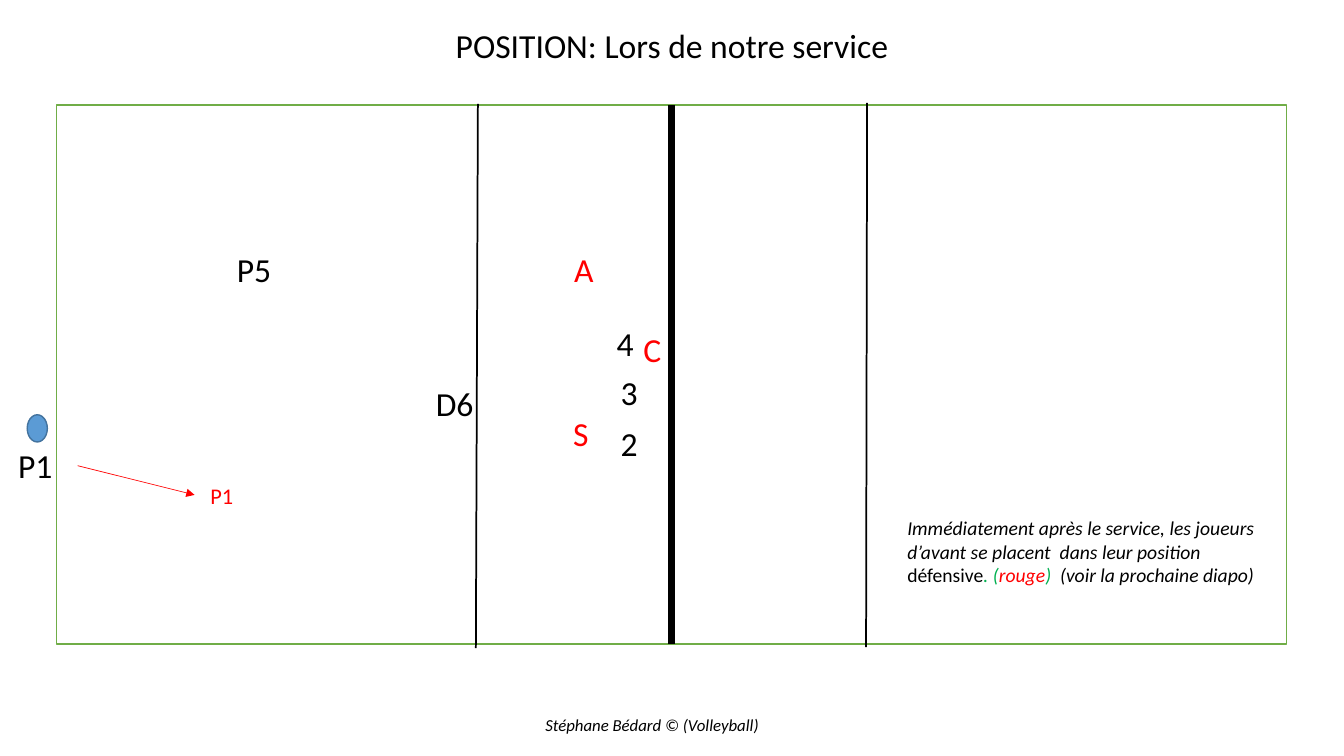
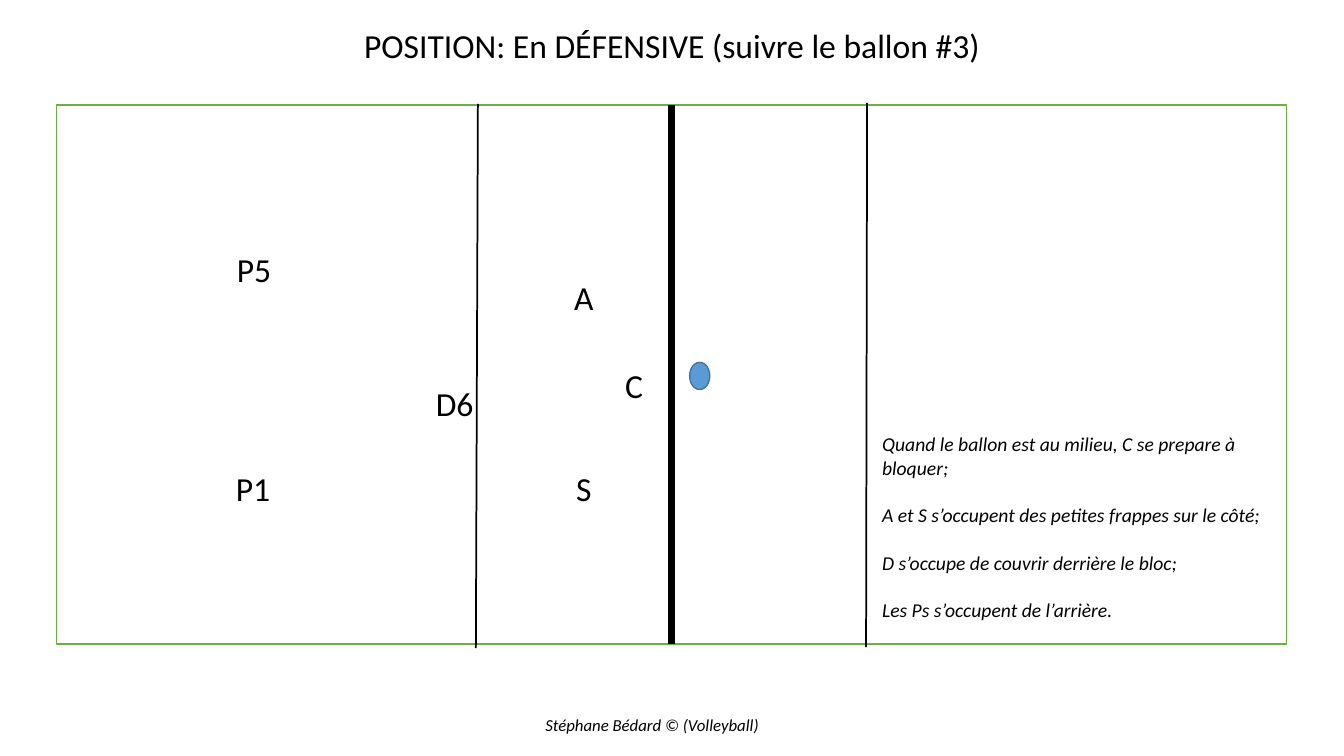
from pptx import Presentation
from pptx.dml.color import RGBColor
from pptx.enum.shapes import MSO_CONNECTOR, MSO_SHAPE
from pptx.enum.text import MSO_ANCHOR, PP_ALIGN
from pptx.oxml.ns import qn
from pptx.util import Inches, Pt
from lxml.etree import SubElement

INK = {
    "black": "000000", "red": "FF0000", "green": "00B050", "white": "FFFFFF",
    "court": "70AD47", "ball": "5B9BD5", "rim": "43739E",
}
FONT = "Calibri"
WIDE, HIGH = 13.33, 7.5
LEFT, TOP, LONG, DEEP = 0.56, 1.04, 12.2, 5.35
MID = LEFT + LONG / 2
LINES = [
    ((MID, TOP), (MID, TOP + DEEP), 4.5),
    ((4.74, 1.03), (4.72, 6.43), 1.25),
    ((8.6, 1.02), (8.59, 6.42), 1.25),
]
FOOT = "Stéphane Bédard © (Volleyball)"
BACK = [("D6", 4.51, 4.0, "black", 24), ("P5", 2.52, 2.67, "black", 24)]

SLIDES = [
    {
        "title": "POSITION: Lors de notre service",
        "ball": (0.37, 4.25),
        "team": [
            ("4", 6.2, 3.4, "black", 24),
            ("3", 6.24, 3.89, "black", 24),
            ("2", 6.24, 4.4, "black", 24),
            ("P1", 0.35, 4.61, "black", 24),
            ("P1", 2.2, 4.92, "red", 16),
            ("C", 6.47, 3.46, "red", 24),
            ("S", 5.76, 4.3, "red", 24),
            ("A", 5.79, 2.67, "red", 24),
        ],
        "moves": [((0.77, 4.62), (1.93, 4.91))],
        "box": (8.9, 5.07, 3.92, 1.04),
        "note": [[
            ("Immédiatement après le service, les joueurs d’avant se placent  dans leur position ", "black", True),
            ("défensive", "black", False),
            (". (", "green", True),
            ("rouge", "red", True),
            (")  ", "green", True),
            ("(voir la prochaine diapo)", "black", True),
        ]],
    },
    {
        "title": "POSITION: En DÉFENSIVE (suivre le ballon #3)",
        "ball": (6.94, 3.73),
        "team": [
            ("C", 6.29, 3.82, "black", 24),
            ("A", 5.79, 2.95, "black", 24),
            ("S", 5.79, 4.84, "black", 24),
            ("P1", 2.51, 4.84, "black", 24),
        ],
        "moves": [],
        "box": (8.65, 4.24, 4.11, 2.22),
        "note": [[(line, "black", True)] for line in (
            "Quand le ballon est au milieu, C se prepare à bloquer;",
            "A et S s’occupent des petites frappes sur le côté;",
            "D s’occupe de couvrir derrière le bloc;",
            "Les Ps s’occupent de l’arrière.",
        )],
    },
]


def tint(name):
    return RGBColor.from_string(INK[name])


def put(item, **form):
    for key, value in form.items():
        setattr(item, key, value)


def place(*box):
    return [Inches(n) for n in box]


def write(para, text, color="black", size=24, slant=False):
    run = para.add_run()
    run.text = text
    put(run.font, name=FONT, size=Pt(size), italic=slant)
    run.font.color.rgb = tint(color)


def shape(slide, kind, box, fill, edge):
    item = slide.shapes.add_shape(kind, *place(*box))
    item.shadow.inherit = False
    item.fill.solid()
    item.fill.fore_color.rgb = tint(fill)
    item.line.color.rgb = tint(edge)
    item.line.width = Pt(1)


def line(slide, start, end, width, color="black", head=False):
    item = slide.shapes.add_connector(MSO_CONNECTOR.STRAIGHT, *place(*start, *end))
    item.line.color.rgb = tint(color)
    item.line.width = Pt(width)
    if head:
        SubElement(item.line._get_or_add_ln(), qn("a:tailEnd"), type="triangle")
    SubElement(item._element.spPr, qn("a:effectLst"))


def frame(slide, box):
    text = slide.shapes.add_textbox(*place(*box)).text_frame
    text.word_wrap = True
    return text


def label(slide, text, x, y, color, size):
    wide, high = 0.6, 0.5
    body = frame(slide, (x - wide / 2, y - high / 2, wide, high))
    put(body, margin_left=0, margin_right=0, margin_top=0, margin_bottom=0,
        vertical_anchor=MSO_ANCHOR.MIDDLE)
    para = body.paragraphs[0]
    para.alignment = PP_ALIGN.CENTER
    write(para, text, color, size)


def head(slide, text):
    left, top, width, height = place(WIDE / 8, 0.24, WIDE * 3 / 4, 0.47)
    title = slide.shapes.title
    put(title, left=left, top=top, width=width, height=height)
    title.text_frame.vertical_anchor = MSO_ANCHOR.MIDDLE
    para = title.text_frame.paragraphs[0]
    put(para, alignment=PP_ALIGN.CENTER, line_spacing=0.9)
    write(para, text)


def court(slide):
    shape(slide, MSO_SHAPE.RECTANGLE, (LEFT, TOP, LONG, DEEP), "white", "court")
    for start, end, width in LINES:
        line(slide, start, end, width)
    foot = frame(slide, (5.31, 7.04, 2.5, 0.3))
    write(foot.paragraphs[0], FOOT, size=12, slant=True)


def note(slide, box, paras):
    body = frame(slide, box)
    for i, runs in enumerate(paras):
        para = body.add_paragraph() if i else body.paragraphs[0]
        para.space_before = Pt(17 if i else 0)
        for text, color, slant in runs:
            write(para, text, color, 14, slant)


def build(deck, page):
    slide = deck.slides.add_slide(deck.slide_layouts[5])
    head(slide, page["title"])
    court(slide)
    for spot in BACK + page["team"]:
        label(slide, *spot)
    x, y = page["ball"]
    wide, high = 0.2, 0.27
    shape(slide, MSO_SHAPE.OVAL, (x - wide / 2, y - high / 2, wide, high), "ball", "rim")
    for start, end in page["moves"]:
        line(slide, start, end, 0.5, "red", True)
    note(slide, page["box"], page["note"])


def main():
    deck = Presentation()
    put(deck, slide_width=Inches(WIDE), slide_height=Inches(HIGH))
    for page in SLIDES:
        build(deck, page)
    deck.save("out.pptx")


if __name__ == "__main__":
    main()
